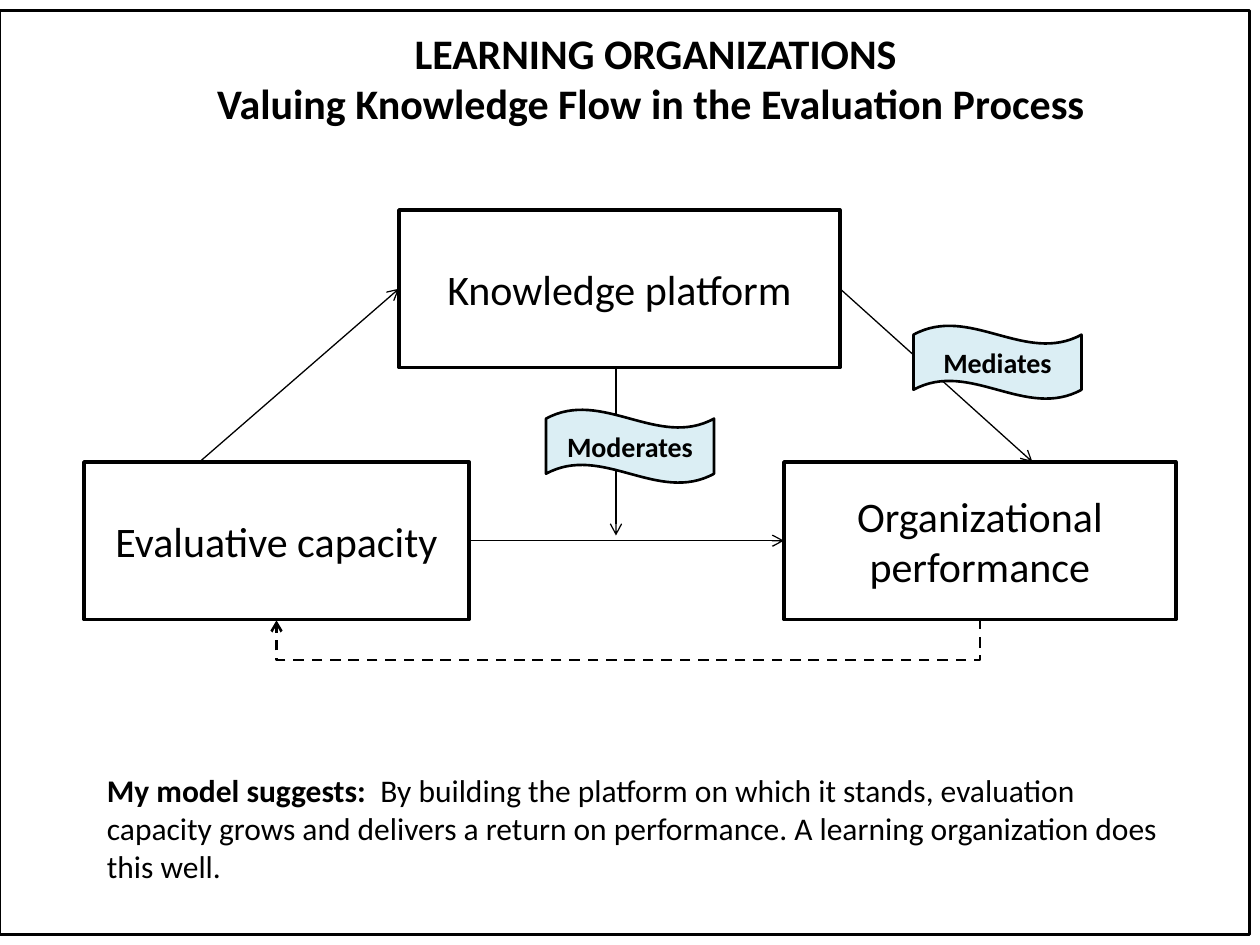
"""Build the learning organizations model slide."""

from dataclasses import dataclass
from typing import Optional

from lxml import etree
from pptx import Presentation
from pptx import util as u
from pptx.dml.color import RGBColor
from pptx.enum import dml, shapes, text
from pptx.oxml import ns


@dataclass(frozen=True)
class Theme:
    font: str = "Calibri"
    ink: RGBColor = RGBColor(0, 0, 0)
    paper: RGBColor = RGBColor(255, 255, 255)
    ribbon: RGBColor = RGBColor(0xDB, 0xEE, 0xF4)
    heading_size: float = 24
    body_size: float = 18
    label_size: float = 16
    thin: float = 0.75
    medium: float = 1.5
    thick: float = 2


@dataclass(frozen=True)
class Panel:
    left: float
    top: float
    width: float
    height: float
    line_width: float
    label: str = ""
    size: float = 24
    bold: bool = False
    fill: Optional[RGBColor] = None
    kind: shapes.MSO_SHAPE = shapes.MSO_SHAPE.RECTANGLE


@dataclass(frozen=True)
class Arrow:
    start_x: float
    start_y: float
    end_x: float
    end_y: float


THEME = Theme()
FRAME = Panel(0, 6, 714, 528, THEME.medium)
BOXES = [
    Panel(48, 264, 220, 90, THEME.thick, "Evaluative capacity", fill=THEME.paper),
    Panel(448, 264, 224, 90, THEME.thick, "Organizational performance", fill=THEME.paper),
    Panel(228, 120, 252, 90, THEME.thick, "Knowledge platform"),
]
RIBBONS = [
    Panel(left, top, 96, 42, THEME.medium, label, THEME.label_size, True,
          THEME.ribbon, shapes.MSO_SHAPE.WAVE)
    for left, top, label in [(312, 234, "Moderates"), (522, 186, "Mediates")]
]
ARROWS = [
    Arrow(480, 165, 590, 264),
    Arrow(268, 309, 448, 309),
    Arrow(352, 210, 352, 306),
    Arrow(114, 264, 228, 165),
]
TITLE = " LEARNING ORGANIZATIONS\vValuing Knowledge Flow in the Evaluation Process"
LEAD = "My model suggests:  "
CLAIM = (
    "By building the platform on which it stands, evaluation capacity grows "
    "and delivers a return on performance. A learning organization does this well."
)


def format_run(run, size: float, bold: bool) -> None:
    """Apply the theme font to one run."""
    run.font.name = THEME.font
    run.font.size = u.Pt(size)
    run.font.bold = bold
    run.font.color.rgb = THEME.ink


def format_centred(paragraph, size: float, bold: bool) -> None:
    """Centre a paragraph and format all its runs."""
    paragraph.alignment = text.PP_ALIGN.CENTER
    for run in paragraph.runs:
        format_run(run, size, bold)


def draw_panel(slide, panel: Panel) -> None:
    """Draw an outlined shape with an optional fill and label."""
    shape = slide.shapes.add_shape(
        panel.kind, u.Pt(panel.left), u.Pt(panel.top), u.Pt(panel.width), u.Pt(panel.height)
    )
    shape.shadow.inherit = False
    shape.line.color.rgb = THEME.ink
    shape.line.width = u.Pt(panel.line_width)
    if panel.fill is None:
        shape.fill.background()
    else:
        shape.fill.solid()
        shape.fill.fore_color.rgb = panel.fill
    if panel.label:
        shape.text_frame.text = panel.label
        shape.text_frame.vertical_anchor = text.MSO_ANCHOR.MIDDLE
        format_centred(shape.text_frame.paragraphs[0], panel.size, panel.bold)


def draw_arrow(slide, arrow: Arrow, kind=shapes.MSO_CONNECTOR.STRAIGHT,
               width: float = THEME.thin):
    """Draw a connector with an open arrowhead at its end."""
    connector = slide.shapes.add_connector(
        kind, u.Pt(arrow.start_x), u.Pt(arrow.start_y), u.Pt(arrow.end_x), u.Pt(arrow.end_y)
    )
    connector.line.color.rgb = THEME.ink
    connector.line.width = u.Pt(width)
    outline = connector.line._get_or_add_ln()
    etree.SubElement(outline, ns.qn("a:tailEnd"), type="arrow")
    etree.SubElement(connector._element.spPr, ns.qn("a:effectLst"))
    return connector


def draw_feedback(slide, start_x: float, end_x: float, y: float, drop: float) -> None:
    """Draw the dashed loop below the boxes as a quarter-turned elbow one point wide."""
    centre, half_span = (start_x + end_x) / 2, (start_x - end_x) / 2
    path_box = Arrow(centre - 0.5, y - half_span, centre + 0.5, y + half_span)
    connector = draw_arrow(slide, path_box, shapes.MSO_CONNECTOR.ELBOW, THEME.medium)
    connector.line.dash_style = dml.MSO_LINE.DASH
    properties = connector._element.spPr
    properties.find(ns.qn("a:xfrm")).set("rot", str(90 * 60000))
    adjustments = properties.find(ns.qn("a:prstGeom")).find(ns.qn("a:avLst"))
    etree.SubElement(
        adjustments, ns.qn("a:gd"), name="adj1", fmla=f"val {round(drop * 100000)}"
    )


def add_text_box(slide, left: float, top: float, width: float, height: float):
    """Add a wrapping text box and return its first paragraph."""
    box = slide.shapes.add_textbox(u.Pt(left), u.Pt(top), u.Pt(width), u.Pt(height))
    box.text_frame.word_wrap = True
    box.text_frame.auto_size = text.MSO_AUTO_SIZE.SHAPE_TO_FIT_TEXT
    return box.text_frame.paragraphs[0]


def main() -> None:
    """Assemble and save the slide."""
    presentation = Presentation()
    presentation.slide_width, presentation.slide_height = u.Pt(720), u.Pt(540)
    slide = presentation.slides.add_slide(presentation.slide_layouts[6])

    draw_panel(slide, FRAME)
    title = add_text_box(slide, 102, 12, 540, 65.5)
    title.text = TITLE
    format_centred(title, THEME.heading_size, True)

    for box in BOXES:
        draw_panel(slide, box)
    for arrow in ARROWS:
        draw_arrow(slide, arrow)
    draw_feedback(slide, start_x=560, end_x=158, y=354, drop=23.86)
    for ribbon in RIBBONS:
        draw_panel(slide, ribbon)

    summary = add_text_box(slide, 54, 437, 630, 72.7)
    summary.text = LEAD
    summary.add_run().text = CLAIM
    for run, bold in zip(summary.runs, (True, False)):
        format_run(run, THEME.body_size, bold)

    presentation.save("out.pptx")


if __name__ == "__main__":
    main()
